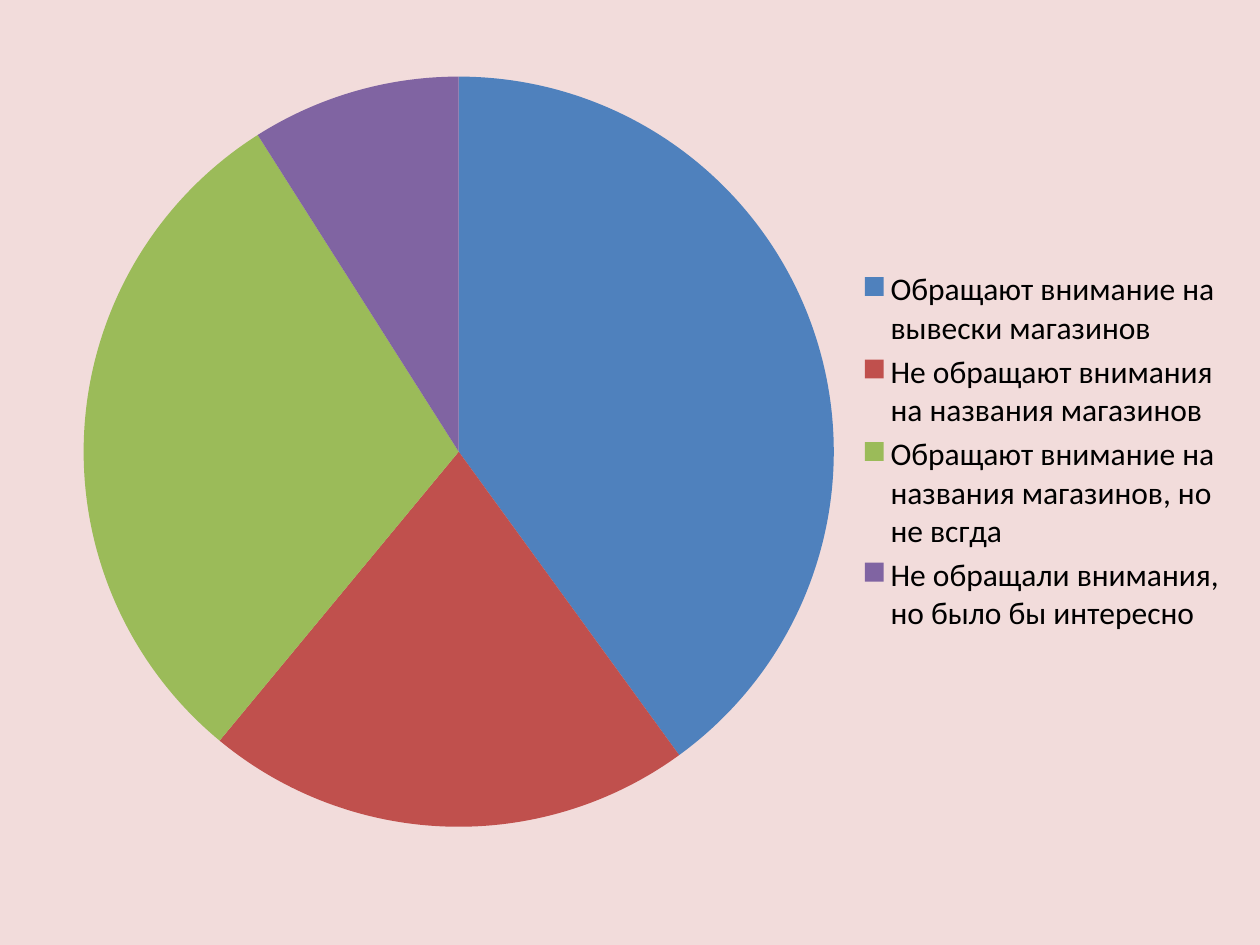
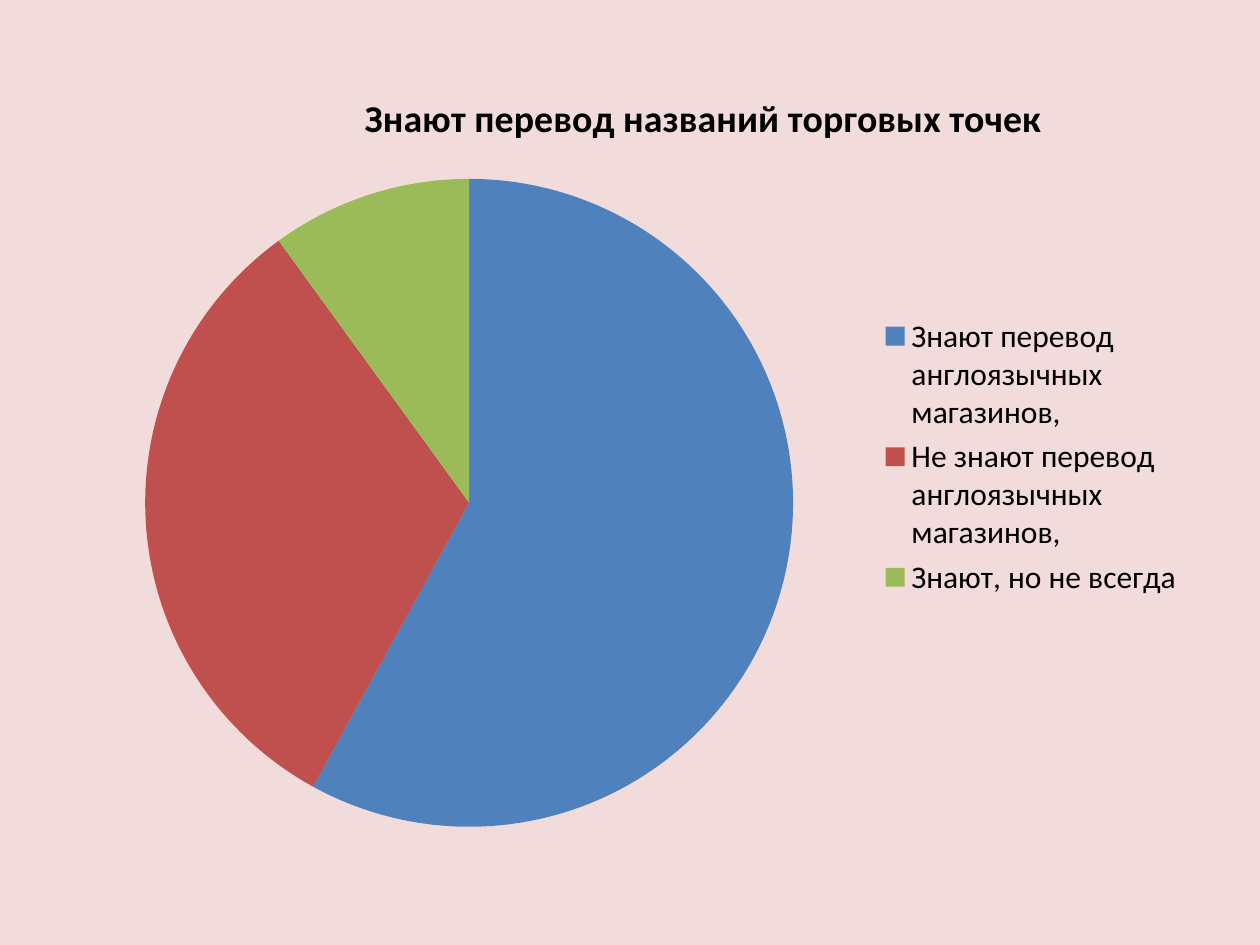
from lxml.etree import SubElement
from pptx import Presentation
from pptx.chart.data import CategoryChartData
from pptx.dml.color import RGBColor
from pptx.enum.chart import XL_CHART_TYPE, XL_LEGEND_POSITION
from pptx.oxml.ns import qn
from pptx.util import Inches, Pt

FONT = "Calibri"
PAPER = "F2DCDB"
INK = "000000"
SLICES = ["4F81BD", "C0504D", "9BBB59", "8064A2"]

NOTICE = [
    ("Обращают внимание на вывески магазинов", 40),
    ("Не обращают внимания на названия магазинов", 21),
    ("Обращают внимание на названия магазинов, но не всгда", 30),
    ("Не обращали внимания, но было бы интересно", 9),
]
KNOW = [
    ("Знают перевод англоязычных магазинов,", 58),
    ("Не знают перевод англоязычных магазинов,", 32),
    ("Знают, но не всегда", 10),
]


def paint(fill, color):
    fill.solid()
    fill.fore_color.rgb = RGBColor.from_string(color)


def style(font, size, bold=False):
    font.name = FONT
    font.size = Pt(size)
    font.bold = bold
    font.color.rgb = RGBColor.from_string(INK)


def add_pie(slide, box, answers):
    data = CategoryChartData()
    data.categories = [label for label, _ in answers]
    data.add_series("Series 1", [value for _, value in answers])
    chart = slide.shapes.add_chart(
        XL_CHART_TYPE.PIE, *[Inches(n) for n in box], data).chart
    style(chart.font, 18)
    chart.has_title = False
    chart.has_legend = True
    chart.legend.position = XL_LEGEND_POSITION.RIGHT
    chart.legend.include_in_layout = False
    plot = chart.plots[0]
    plot.vary_by_categories = True
    for i, color in enumerate(SLICES[:len(answers)]):
        paint(plot.series[0].points[i].format.fill, color)
    return chart


def add_title(chart, text, x, y):
    """Put a bold title at x, y, given as fractions of the chart."""
    chart.has_title = True
    title = chart.chart_title
    run = title.text_frame.paragraphs[0].add_run()
    run.text = text
    style(run.font, 21.6, bold=True)
    layout = title._element.find(qn("c:layout"))
    manual = SubElement(layout, qn("c:manualLayout"))
    for tag, value in (("xMode", "edge"), ("yMode", "edge"), ("x", x), ("y", y)):
        SubElement(manual, qn(f"c:{tag}")).set("val", str(value))


def main():
    prs = Presentation()
    prs.slide_width, prs.slide_height = Inches(10), Inches(7.5)
    paint(prs.slide_master.background.fill, PAPER)
    blank = prs.slide_layouts[6]

    add_pie(prs.slides.add_slide(blank), (0.5, 0.47, 9.34, 6.23), NOTICE)

    pie = add_pie(prs.slides.add_slide(blank), (0.5, 0.55, 9, 6.15), KNOW)
    add_title(pie, "Знают перевод названий торговых точек", 0.26, 0.02)

    prs.save("out.pptx")


if __name__ == "__main__":
    main()
